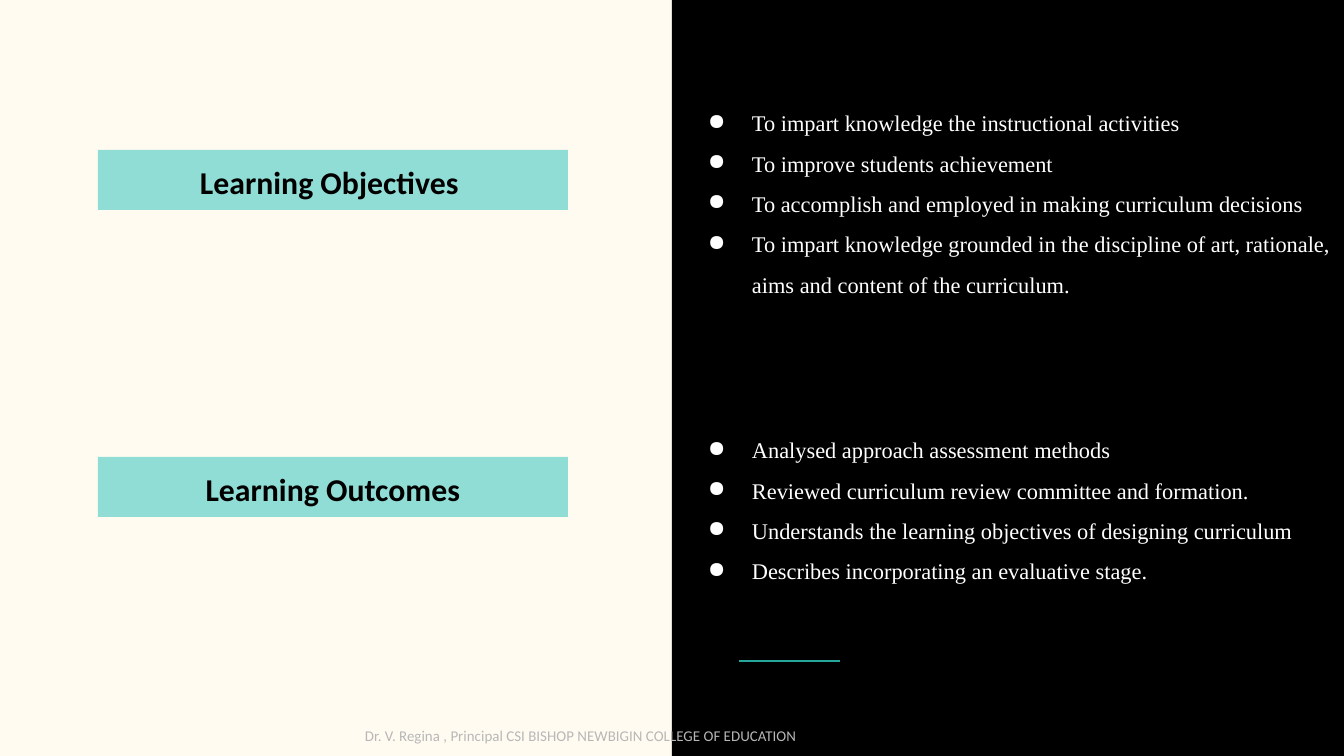
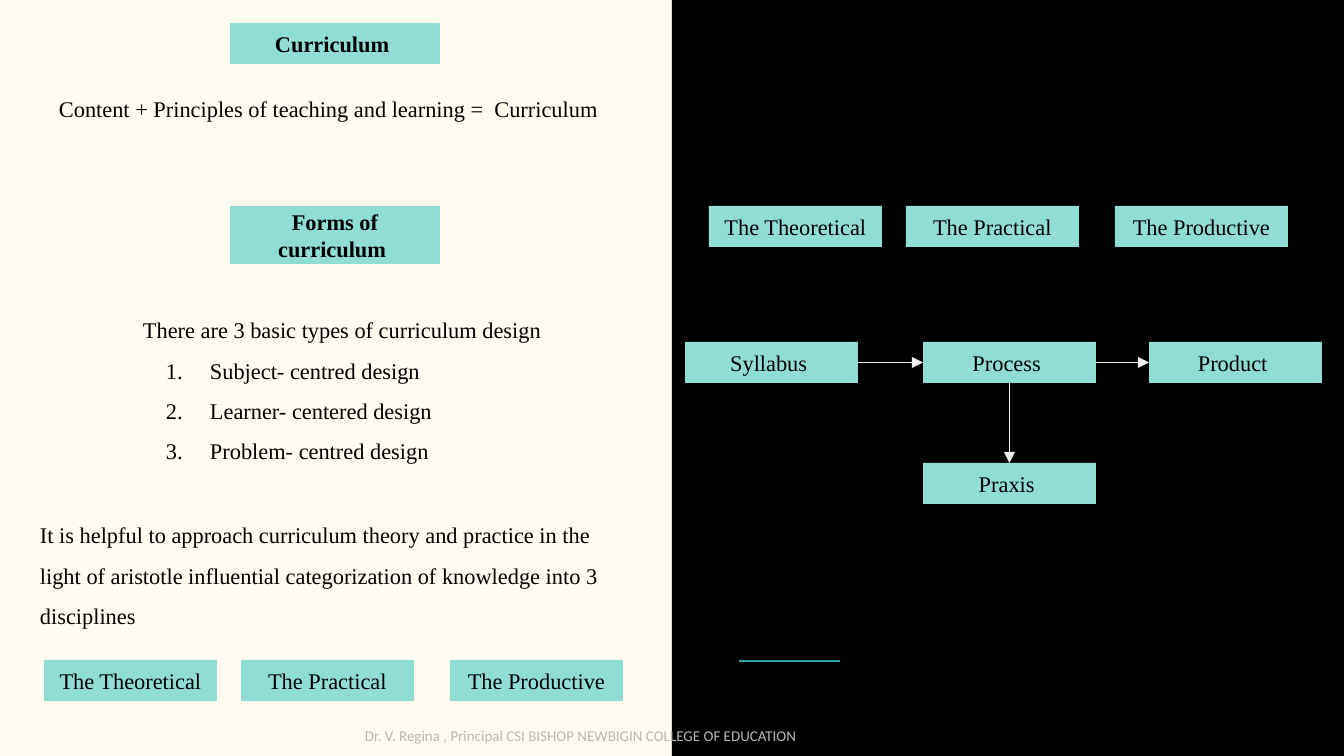
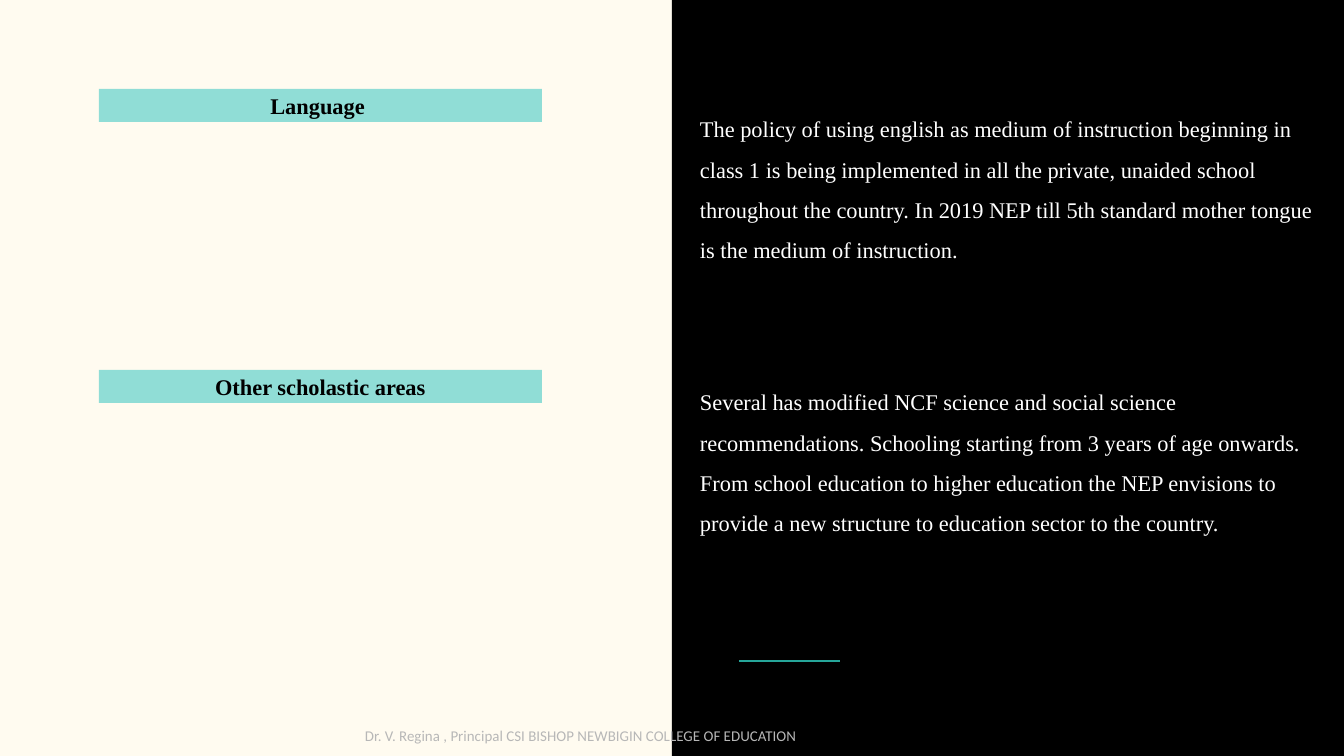
from dataclasses import dataclass
from typing import NamedTuple

from lxml import etree
from pptx import Presentation
from pptx import util as u
from pptx.dml.color import RGBColor
from pptx.enum import shapes, text
from pptx.oxml import ns

SCALE = 914400 * 10 / 1344


def px(size: int) -> u.Emu:
    return u.Emu(round(size * SCALE))


@dataclass(frozen=True)
class Theme:
    cream: str = "FFFBF0"
    black: str = "000000"
    white: str = "FFFFFF"
    mint: str = "90DDD6"
    teal: str = "26A69A"
    pale: str = "EFEFEF"
    grey: str = "B7B7B7"
    serif: str = "Times New Roman"
    sans: str = "Calibri"
    head: float = 17
    body: float = 12
    small: float = 8
    thick: float = 1.5
    thin: float = 0.75
    space: float = 1.5
    inset: int = 13
    indent: int = 67
    hang: int = 44


THEME = Theme()
WIDE, HIGH, HALF = 1344, 756, 672
FOOTER = "Dr. V. Regina , Principal CSI BISHOP NEWBIGIN COLLEGE OF EDUCATION"
DOT, COUNT = "●", "1."
TOP, MID = text.MSO_ANCHOR.TOP, text.MSO_ANCHOR.MIDDLE
UP, LEFT, DOWN, RIGHT = range(4)


class Box(NamedTuple):
    x: int
    y: int
    w: int
    h: int

    def emu(self) -> tuple:
        return tuple(px(side) for side in self)


@dataclass(frozen=True)
class Style:
    face: str = THEME.serif
    size: float = THEME.body
    ink: str = THEME.black
    bold: bool = False


@dataclass(frozen=True)
class Label:
    words: str
    box: Box
    style: Style = Style()
    anchor: text.MSO_ANCHOR = MID


class Line(NamedTuple):
    words: str
    mark: str = ""


@dataclass(frozen=True)
class Block:
    box: Box
    lines: tuple
    style: Style = Style()
    space: float = THEME.space


BOLD = Style(bold=True)
LIGHT = Style(ink=THEME.white)
HEAD = Style(THEME.sans, THEME.head, bold=True)
SMALL = Style(THEME.sans, THEME.small, THEME.grey)


def rgb(code: str) -> RGBColor:
    return RGBColor.from_string(code)


def node(parent, tag: str, **attrs: str):
    return etree.SubElement(parent, ns.qn(tag), attrs)


def dress(para, style: Style) -> None:
    font = para.font
    font.name, font.size, font.bold = style.face, u.Pt(style.size), style.bold
    font.color.rgb = rgb(style.ink)


def frame(shape, anchor: text.MSO_ANCHOR):
    body = shape.text_frame
    body.word_wrap = True
    body.vertical_anchor = anchor
    body.margin_left = body.margin_right = px(THEME.inset)
    body.margin_top = body.margin_bottom = px(THEME.inset)
    return body


def bullet(para, mark: str, ink: str) -> None:
    props = para._p.get_or_add_pPr()
    props.set("marL", str(px(THEME.indent)))
    props.set("indent", str(-px(THEME.hang)))
    tint = etree.Element(ns.qn("a:buClr"))
    node(tint, "a:srgbClr", val=ink)
    if mark == COUNT:
        sign = etree.Element(ns.qn("a:buAutoNum"), type="arabicPeriod")
    else:
        sign = etree.Element(ns.qn("a:buChar"), char=mark)
    run = props.find(ns.qn("a:defRPr"))
    run.addprevious(tint)
    run.addprevious(sign)


def panel(slide, box: Box, fill: str):
    shape = slide.shapes.add_shape(shapes.MSO_SHAPE.RECTANGLE, *box.emu())
    shape.shadow.inherit = False
    shape.fill.solid()
    shape.fill.fore_color.rgb = rgb(fill)
    shape.line.fill.background()
    return shape


def label(slide, item: Label):
    shape = panel(slide, item.box, THEME.mint)
    para = frame(shape, item.anchor).paragraphs[0]
    para.text = item.words
    para.alignment = text.PP_ALIGN.CENTER
    dress(para, item.style)
    return shape


def block(slide, item: Block) -> None:
    body = frame(slide.shapes.add_textbox(*item.box.emu()), TOP)
    for i, line in enumerate(item.lines):
        para = body.add_paragraph() if i else body.paragraphs[0]
        para.text = line.words
        para.line_spacing = item.space
        dress(para, item.style)
        if line.mark:
            bullet(para, line.mark, item.style.ink)


def stroke(slide, ends: Box, ink: str, width: float):
    line = slide.shapes.add_connector(shapes.MSO_CONNECTOR.STRAIGHT, *ends.emu())
    line.line.color.rgb = rgb(ink)
    line.line.width = u.Pt(width)
    node(line._element.spPr, "a:effectLst")
    return line


def arrow(slide, start, out: int, end, into: int) -> None:
    line = stroke(slide, Box(0, 0, 0, 0), THEME.pale, THEME.thin)
    line.begin_connect(start, out)
    line.end_connect(end, into)
    node(line.line._get_or_add_ln(), "a:tailEnd", type="triangle")


def page(deck):
    slide = deck.slides.add_slide(deck.slide_layouts[6])
    back = slide.background.fill
    back.solid()
    back.fore_color.rgb = rgb(THEME.cream)
    panel(slide, Box(HALF, 0, HALF, HIGH), THEME.black)
    stroke(slide, Box(739, 661, 840, 661), THEME.teal, THEME.thick)
    return slide


def footer(slide) -> None:
    block(slide, Block(Box(352, 718, 732, 38), (Line(FOOTER),), SMALL, 1.0))


def points(*words: str, mark: str = DOT) -> tuple:
    return tuple(Line(item, mark) for item in words)


def goals(deck) -> None:
    slide = page(deck)
    for words, y in (("Learning Objectives ", 150), ("Learning Outcomes", 457)):
        label(slide, Label(words, Box(98, y, 470, 60), HEAD, TOP))
    aims = points(
        "To impart knowledge the instructional activities",
        "To improve students achievement",
        "To accomplish and employed in making curriculum decisions",
        "To impart knowledge grounded in the discipline of art, "
        "rationale, aims and content of the curriculum.",
    )
    gains = points(
        "Analysed approach assessment methods",
        "Reviewed curriculum review committee and formation.",
        "Understands the learning objectives of designing curriculum",
        "Describes incorporating an evaluative stage.",
    )
    block(slide, Block(Box(HALF, 83, HALF, 246), aims, LIGHT))
    block(slide, Block(Box(HALF, 410, HALF, 220), gains, LIGHT))
    footer(slide)


def chip(slide, words: str, x: int, y: int):
    return label(slide, Label(words, Box(x, y, 173, 41)))


def forms(deck) -> None:
    slide = page(deck)
    label(slide, Label("Curriculum ", Box(230, 23, 210, 41), BOLD))
    sum_up = Line("Content + Principles of teaching and learning =  Curriculum")
    block(slide, Block(Box(46, 82, 578, 58), (sum_up,), space=1.0))
    label(slide, Label("Forms of curriculum ", Box(230, 206, 210, 58), BOLD))
    kinds = points(
        "Subject- centred design",
        "Learner- centered design",
        "Problem- centred design",
        mark=COUNT,
    )
    intro = Line("There are 3 basic types of curriculum design")
    block(slide, Block(Box(130, 290, 570, 235), (intro, *kinds)))
    theory = Line(
        "It is helpful to approach curriculum theory and practice in the light of "
        "aristotle influential categorization of knowledge into 3 disciplines"
    )
    block(slide, Block(Box(27, 495, 621, 128), (theory,)))

    fields = (("The Theoretical", 44), ("The Practical", 241), ("The Productive", 450))
    for shift, y in ((0, 660), (665, 206)):
        for words, x in fields:
            chip(slide, words, x + shift, y)

    steps = (
        ("Syllabus ", 685, 342),
        ("Process ", 923, 342),
        ("Product ", 1149, 342),
        ("Praxis ", 923, 463),
    )
    start, core, goal, deed = [chip(slide, *step) for step in steps]
    arrow(slide, start, RIGHT, core, LEFT)
    arrow(slide, core, RIGHT, goal, LEFT)
    arrow(slide, core, DOWN, deed, UP)
    footer(slide)


def areas(deck) -> None:
    slide = page(deck)
    tongue = (
        "The policy of using english as medium of instruction beginning in class 1 "
        "is being implemented in all the private, unaided school throughout the "
        "country. In 2019 NEP till 5th standard mother tongue is the medium of "
        "instruction."
    )
    reform = (
        "Several has modified NCF science and social science recommendations. "
        "Schooling starting from 3 years of age onwards. From school education to "
        "higher education the NEP envisions to provide a new structure to education "
        "sector to the country."
    )
    rows = (
        ("Language ", 89, tongue, Box(687, 89, 646, 149)),
        ("Other scholastic areas", 370, reform, Box(687, 362, 646, 190)),
    )
    for title, y, words, box in rows:
        label(slide, Label(title, Box(99, y, 443, 33), BOLD))
        block(slide, Block(box, (Line(words),), LIGHT))
    footer(slide)


def main() -> None:
    deck = Presentation()
    deck.slide_width, deck.slide_height = px(WIDE), px(HIGH)
    for build in (goals, forms, areas):
        build(deck)
    deck.save("out.pptx")


if __name__ == "__main__":
    main()
